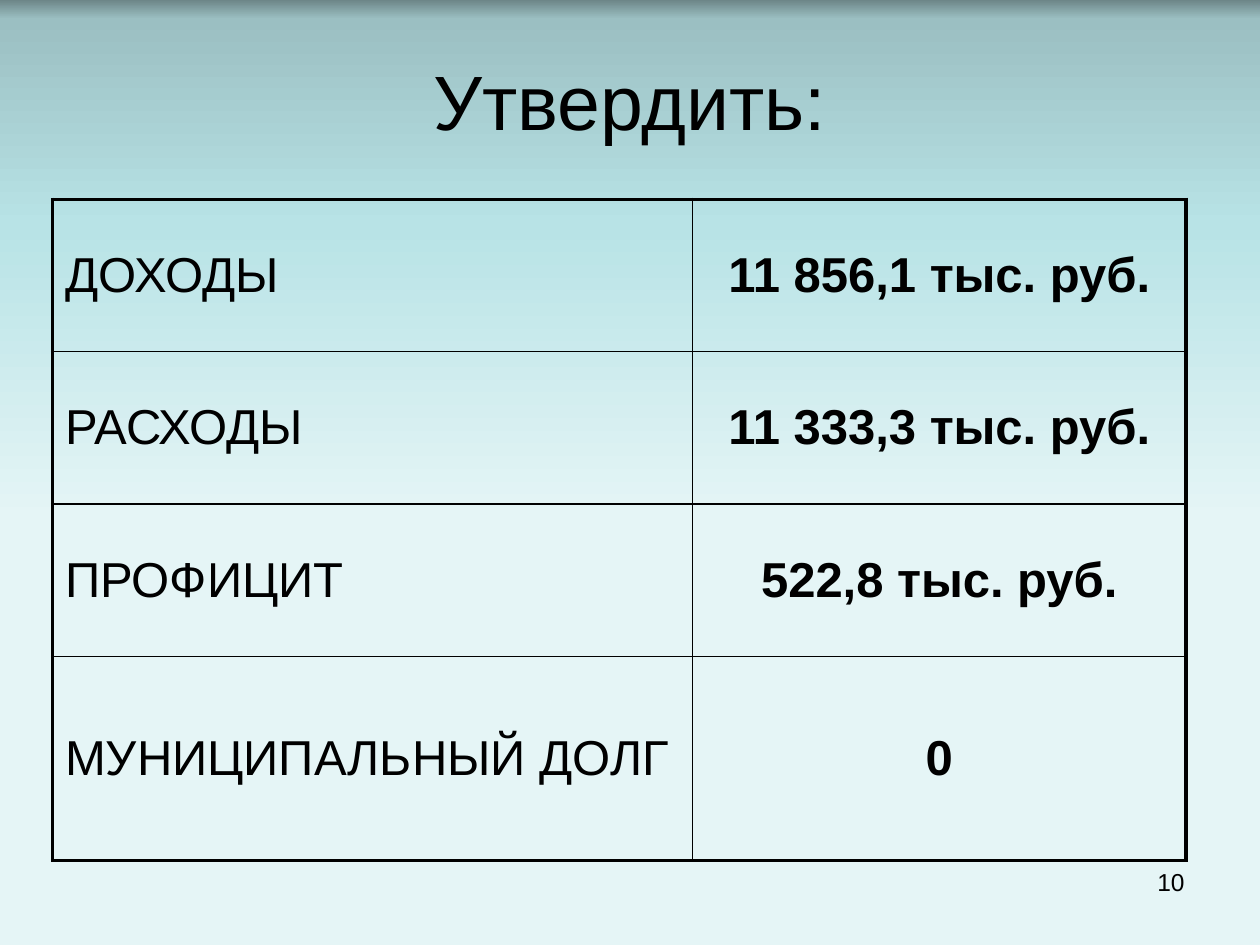
import dataclasses

import lxml.etree
import pptx
import pptx.dml.color
import pptx.enum.text
import pptx.oxml.ns
import pptx.util

Cm = pptx.util.Cm
Pt = pptx.util.Pt
qn = pptx.oxml.ns.qn
ALIGN = pptx.enum.text.PP_ALIGN
MIDDLE = pptx.enum.text.MSO_ANCHOR.MIDDLE


@dataclasses.dataclass(frozen=True)
class Theme:
    font: str = "Arial"
    ink: str = "000000"
    title_size: float = 44
    table_size: float = 28
    number_size: float = 14
    outer_line: float = 2.25
    inner_line: float = 1
    backdrop: tuple = ((0, "6D8688"), (2, "9BBFC2"), (24, "B8E3E6"),
                       (55, "E5F5F6"), (100, "E5F5F6"))


class SlideBuilder:
    def __init__(self, slide, theme):
        self.slide = slide
        self.theme = theme

    def background(self):
        fill = self.slide.background.fill
        fill.gradient()
        fill.gradient_angle = 270  # counter-clockwise, so top to bottom
        stops = fill._fill._gradFill.find(qn("a:gsLst"))
        for gs in list(stops):
            stops.remove(gs)
        for percent, color in self.theme.backdrop:
            gs = lxml.etree.SubElement(stops, qn("a:gs"), pos=str(percent * 1000))
            lxml.etree.SubElement(gs, qn("a:srgbClr"), val=color)

    def add_text(self, tf, text, size, align, bold=False):
        p = tf.paragraphs[0]
        p.alignment = align
        r = p.add_run()
        r.text = text
        r.font.name = self.theme.font
        r.font.size = Pt(size)
        r.font.bold = bold
        r.font.color.rgb = pptx.dml.color.RGBColor.from_string(self.theme.ink)
        return p

    def title(self, text, left, top, width, height):
        sp = self.slide.shapes.title
        sp.left, sp.top, sp.width, sp.height = left, top, width, height
        sp.text_frame.vertical_anchor = MIDDLE
        self.add_text(sp.text_frame, text, self.theme.title_size, ALIGN.CENTER)

    def page_number(self, text, left, top, width, height):
        sp = self.slide.shapes.add_textbox(left, top, width, height)
        sp.text_frame.word_wrap = True
        self.add_text(sp.text_frame, text, self.theme.number_size, ALIGN.RIGHT)

    def borders(self, cell, **outer):
        """Rule all four sides; a side named True in outer gets the frame line."""
        tc_pr = cell._tc.get_or_add_tcPr()
        for i, side in enumerate("LRTB"):
            weight = self.theme.outer_line if outer[side] else self.theme.inner_line
            ln = lxml.etree.Element(qn(f"a:ln{side}"), w=str(int(Pt(weight))))
            solid = lxml.etree.SubElement(ln, qn("a:solidFill"))
            lxml.etree.SubElement(solid, qn("a:srgbClr"), val=self.theme.ink)
            tc_pr.insert(i, ln)

    def table(self, rows, left, top, widths, heights):
        table = self.slide.shapes.add_table(
            len(rows), len(widths), left, top, sum(widths), sum(heights)).table
        table.first_row = table.horz_banding = False
        for column, width in zip(table.columns, widths):
            column.width = width
        for i, (row, height) in enumerate(zip(rows, heights)):
            table.rows[i].height = height
            for j, text in enumerate(row):
                cell = table.cell(i, j)
                cell.vertical_anchor = MIDDLE
                cell.fill.background()
                p = self.add_text(cell.text_frame, text, self.theme.table_size,
                                  ALIGN.CENTER if j else ALIGN.LEFT, bold=j > 0)
                p.space_before = Pt(0.2 * self.theme.table_size)
                self.borders(cell, L=j == 0, R=j == len(widths) - 1,
                             T=i == 0, B=i == len(rows) - 1)


def main():
    prs = pptx.Presentation()
    prs.slide_width, prs.slide_height = Cm(25.4), Cm(19.05)
    s = SlideBuilder(prs.slides.add_slide(prs.slide_layouts[5]), Theme())
    s.background()
    s.page_number("10", Cm(18.2), Cm(17.35), Cm(5.93), Cm(1.32))
    s.title("Утвердить:", Cm(1.27), Cm(0.85), Cm(22.86), Cm(2.33))
    budget = [
        ("ДОХОДЫ", "11 856,1 тыс. руб."),
        ("РАСХОДЫ", "11 333,3 тыс. руб."),
        ("ПРОФИЦИТ", "522,8 тыс. руб."),
        ("МУНИЦИПАЛЬНЫЙ ДОЛГ", "0"),
    ]
    s.table(budget, Cm(1.06), Cm(4.02), widths=[Cm(12.9), Cm(9.95)],
            heights=[Cm(3.07)] * 3 + [Cm(4.12)])
    prs.save("out.pptx")


if __name__ == "__main__":
    main()
